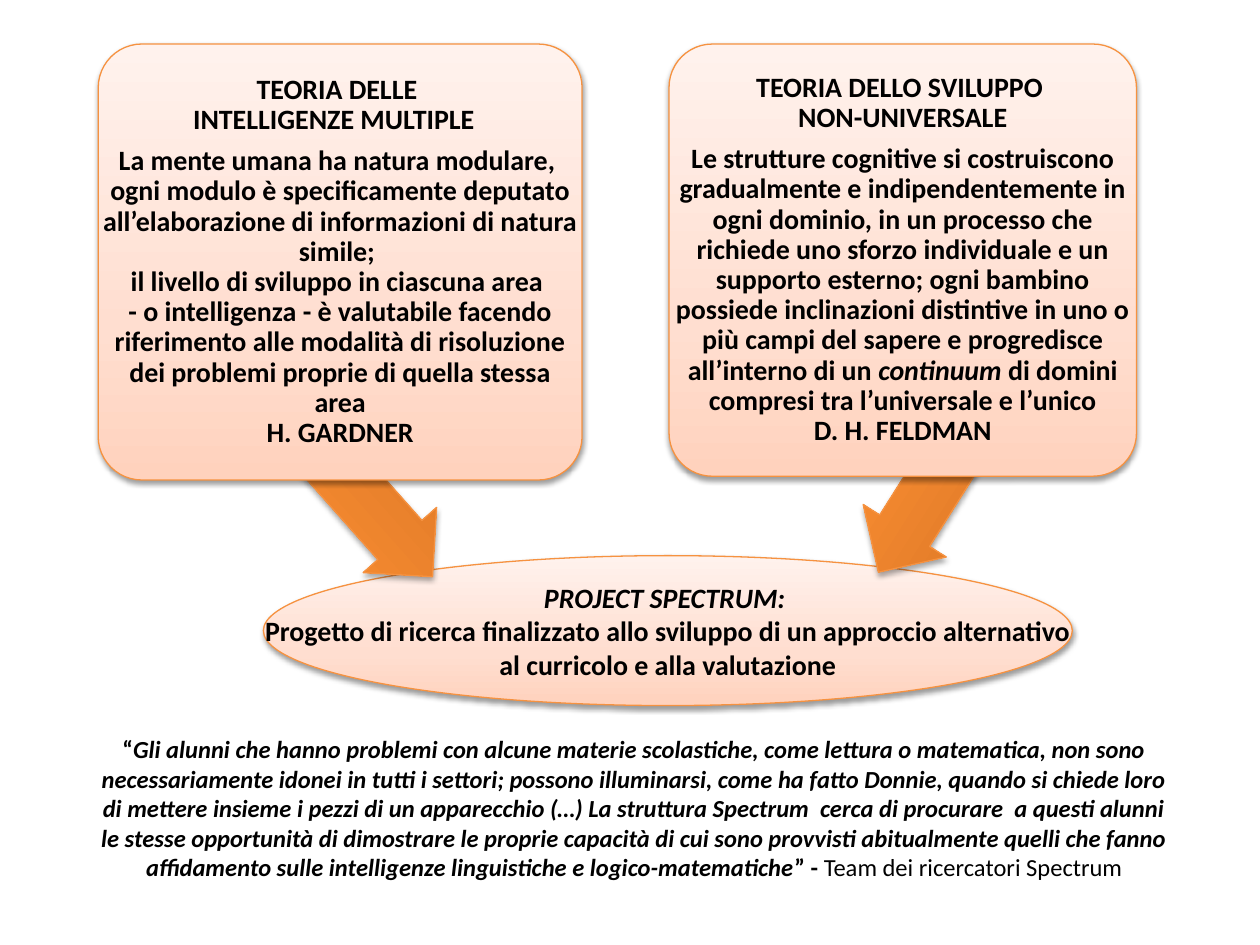
from dataclasses import dataclass

from lxml import etree
from pptx import Presentation
from pptx import util as u
from pptx.dml.color import RGBColor
from pptx.enum import shapes, text
from pptx.oxml import parse_xml
from pptx.oxml.ns import nsdecls, qn

COLS, ROWS = 100, 75


@dataclass(frozen=True)
class Theme:
    """Colours, font and sizes of the slide."""
    font: str = "Calibri"
    ink: str = "000000"
    paper: str = "FFFFFF"
    edge: str = "F69240"
    pale: tuple = ((0, "FFD2BD"), (35, "FFDED0"), (100, "FFF2ED"))
    strong: tuple = ((0, "CC6E20"), (80, "FF9034"), (100, "FF9136"))
    body: int = 16
    quote: int = 14


THEME = Theme()

GARDNER = [
    ("TEORIA DELLE ", 0),
    ("INTELLIGENZE MULTIPLE  ", 6),
    ("La mente umana ha natura modulare,  ogni modulo è specificamente deputato "
     "all’elaborazione di informazioni di natura simile; ", 0),
    ("il livello di sviluppo in ciascuna area ", 0),
    ("- o intelligenza - è valutabile facendo riferimento alle modalità di "
     "risoluzione dei problemi proprie di quella stessa area", 0),
    ("H. GARDNER", 6),
]
FELDMAN = [
    ("TEORIA DELLO SVILUPPO ", 0),
    ("NON-UNIVERSALE", 6),
    ([("Le strutture cognitive si costruiscono gradualmente e indipendentemente in "
       "ogni dominio, in un processo che richiede uno sforzo individuale e un "
       "supporto esterno; ogni bambino possiede inclinazioni distintive in uno o "
       "più campi del sapere e progredisce all’interno di un ", "b"),
      ("continuum", "bi"),
      (" di domini compresi tra l’universale e l’unico", "b")], 0),
    ("D. H. FELDMAN", 6),
]
PROJECT = [
    ([("PROJECT SPECTRUM: ", "bi")], 0),
    ("Progetto di ricerca finalizzato allo sviluppo di un approccio alternativo "
     "al curricolo e alla valutazione", 0),
]
QUOTE = [
    ([("“", "b"),
      ("Gli alunni che hanno problemi con alcune materie scolastiche, come lettura "
       "o matematica, non sono necessariamente idonei in tutti i settori; possono "
       "illuminarsi, come ha fatto Donnie, quando si chiede loro di mettere insieme "
       "i pezzi di un apparecchio (…) La struttura Spectrum  cerca di procurare  a "
       "questi alunni le stesse opportunità di dimostrare le proprie capacità di "
       "cui sono provvisti abitualmente quelli che fanno affidamento sulle "
       "intelligenze linguistiche e logico-matematiche", "bi"),
      ("” - ", "b"),
      ("Team dei ricercatori Spectrum", "")], 0),
]


def grid(left, top, width, height):
    """Turn columns and rows of the slide grid into lengths."""
    col, row = u.Inches(10) / COLS, u.Inches(7.5) / ROWS
    return [u.Emu(round(n)) for n in (left * col, top * row, width * col, height * row)]


def set_gradient(sp, stops):
    """Fill a shape with colour stops running from bottom to top."""
    sp.fill.background()
    marks = "".join(f'<a:gs pos="{pos * 1000}"><a:srgbClr val="{color}"/></a:gs>'
                    for pos, color in stops)
    grad = parse_xml(f'<a:gradFill {nsdecls("a")} rotWithShape="1"><a:gsLst>{marks}'
                     '</a:gsLst><a:lin ang="16200000" scaled="0"/></a:gradFill>')
    pr = sp._element.spPr
    pr.replace(pr.find(qn("a:noFill")), grad)


def set_shadow(sp, opacity):
    """Give a shape a soft shadow straight below it."""
    sp.shadow.inherit = False
    effects = sp._element.spPr.find(qn("a:effectLst"))
    shadow = etree.SubElement(effects, qn("a:outerShdw"), blurRad=str(u.Pt(3.1)),
                              dist=str(u.Pt(1.7)), dir="5400000", rotWithShape="0")
    color = etree.SubElement(shadow, qn("a:srgbClr"), val=THEME.ink)
    etree.SubElement(color, qn("a:alpha"), val=str(opacity * 1000))


def add_figure(slide, kind, box, stops, adjust=(), rotation=0, opacity=38):
    """Add a gradient preset shape with an orange edge and a shadow."""
    sp = slide.shapes.add_shape(kind, *grid(*box))
    for i, value in enumerate(adjust):
        sp.adjustments[i] = value
    sp.rotation = rotation
    set_gradient(sp, stops)
    sp.line.color.rgb = RGBColor.from_string(THEME.edge)
    sp.line.width = u.Pt(0.75)
    set_shadow(sp, opacity)


def add_text(slide, box, paragraphs, size=THEME.body, margin=0.03, spacing=None,
             anchor=text.MSO_ANCHOR.MIDDLE, fill=None):
    """Add a centred text box of paragraphs given as (runs, space after)."""
    sp = slide.shapes.add_textbox(*grid(*box))
    if fill:
        sp.fill.solid()
        sp.fill.fore_color.rgb = RGBColor.from_string(fill)
    tf = sp.text_frame
    tf.word_wrap = True
    tf.vertical_anchor = anchor
    tf.margin_left = tf.margin_right = u.Inches(margin)
    tf.margin_top = tf.margin_bottom = u.Inches(min(margin, 0.05))
    for i, (runs, after) in enumerate(paragraphs):
        p = tf.add_paragraph() if i else tf.paragraphs[0]
        p.alignment = text.PP_ALIGN.CENTER
        p.line_spacing = spacing
        p.space_after = u.Pt(after)
        for words, style in [(runs, "b")] if isinstance(runs, str) else runs:
            r = p.add_run()
            r.text = words
            r.font.name, r.font.size = THEME.font, u.Pt(size)
            r.font.bold, r.font.italic = "b" in style, "i" in style
            r.font.color.rgb = RGBColor.from_string(THEME.ink)


def add_theory(slide, box, paragraphs, arrow, rotation):
    """Add a theory panel above the arrow that leads to the project."""
    add_figure(slide, shapes.MSO_SHAPE.LEFT_ARROW, arrow, THEME.strong,
               (0.6, 0.5), rotation, opacity=35)
    add_figure(slide, shapes.MSO_SHAPE.ROUNDED_RECTANGLE, box, THEME.pale, (0.1,))
    add_text(slide, box, paragraphs, spacing=0.9)


def add_project(slide, box, paragraphs):
    """Add the project ellipse with its text across the full width."""
    add_figure(slide, shapes.MSO_SHAPE.OVAL, box, THEME.pale)
    add_text(slide, box, paragraphs, margin=0.01)


def main():
    """Build the slide and save it."""
    prs = Presentation()
    prs.slide_width, prs.slide_height = u.Inches(10), u.Inches(7.5)
    slide = prs.slides.add_slide(prs.slide_layouts[6])
    add_project(slide, (20.9, 44.1, 64.2, 11.9), PROJECT)
    add_theory(slide, (7.8, 3.5, 38.4, 34.6), GARDNER, (9.7, 30.8, 29.6, 7.8), 228.4)
    add_theory(slide, (53.1, 3.5, 37.1, 34.3), FELDMAN, (63.6, 30.4, 26.3, 7.8), 302.3)
    add_text(slide, (7, 57.8, 86.7, 12.8), QUOTE, size=THEME.quote, margin=0.1,
             anchor=text.MSO_ANCHOR.TOP, fill=THEME.paper)
    prs.save("out.pptx")


if __name__ == "__main__":
    main()
